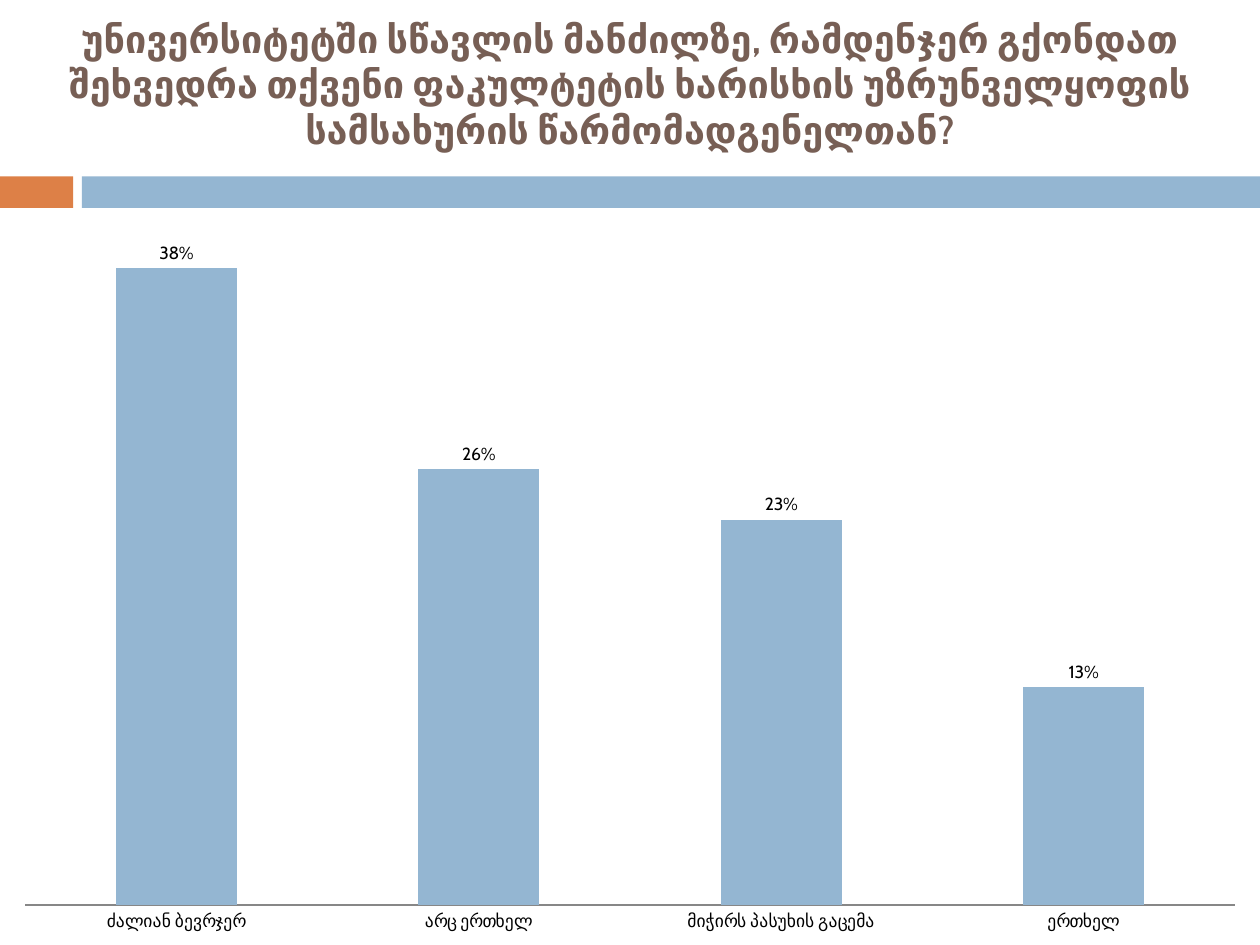
import pptx
import pptx.chart.data
import pptx.dml.color
import pptx.enum.chart
import pptx.enum.shapes
import pptx.enum.text
import pptx.oxml
import pptx.oxml.ns
import pptx.util

TITLE = "უნივერსიტეტში სწავლის მანძილზე, რამდენჯერ გქონდათ შეხვედრა თქვენი ფაკულტეტის ხარისხის უზრუნველყოფის სამსახურის წარმომადგენელთან?"
ANSWERS = [
    ("ძალიან ბევრჯერ", 0.38),
    ("არც ერთხელ", 0.26),
    ("მიჭირს პასუხის გაცემა", 0.23),
    ("ერთხელ", 0.13),
]
FONT = "Cabin"
BLUE, ORANGE, BROWN, BLACK, GRAY = "94B6D2", "DD8047", "775F55", "000000", "878787"
WIDTH, HEIGHT = 10, 7.5
TITLE_HEIGHT, CHART_TOP = 1.33, 1.75
BAND_TOP, BAND_HEIGHT = 1.4, 0.25
BANDS = [(0, 0.58, ORANGE), (0.65, WIDTH, BLUE)]
PLOT = {"x": 0.02, "y": 0.02, "w": 0.96, "h": 0.925}


def color(value):
    return pptx.dml.color.RGBColor.from_string(value)


def box(*lengths):
    return [pptx.util.Inches(v) for v in lengths]


def style(font, size, value, bold=False):
    font.name, font.size, font.bold = FONT, pptx.util.Pt(size), bold
    font.color.rgb = color(value)


def add_title(s):
    sp = s.shapes.title
    sp.left, sp.top, sp.width, sp.height = box(0, 0, WIDTH, TITLE_HEIGHT)
    tf = sp.text_frame
    tf.text = TITLE
    tf.word_wrap = True
    tf.auto_size = pptx.enum.text.MSO_AUTO_SIZE.NONE
    tf.vertical_anchor = pptx.enum.text.MSO_ANCHOR.MIDDLE
    p = tf.paragraphs[0]
    p.alignment = pptx.enum.text.PP_ALIGN.CENTER
    style(p.font, 21.6, BROWN, True)


def add_bands(s):
    for left, right, fill in BANDS:
        sp = s.shapes.add_shape(
            pptx.enum.shapes.MSO_SHAPE.RECTANGLE,
            *box(left, BAND_TOP, right - left, BAND_HEIGHT))
        sp.shadow.inherit = False
        sp.fill.solid()
        sp.fill.fore_color.rgb = color(fill)
        sp.line.fill.background()


def place_plot(chart):
    modes = "".join(f'<c:{k}Mode val="edge"/>' for k in "xy")
    sizes = "".join(f'<c:{k} val="{v}"/>' for k, v in PLOT.items())
    layout = pptx.oxml.parse_xml(
        f'<c:layout {pptx.oxml.ns.nsdecls("c")}><c:manualLayout>'
        f'<c:layoutTarget val="inner"/>{modes}{sizes}</c:manualLayout></c:layout>')
    area = chart.plots[0]._element.getparent()
    for old in area.findall(pptx.oxml.ns.qn("c:layout")):
        area.remove(old)
    area.insert(0, layout)


def add_chart(s):
    data = pptx.chart.data.CategoryChartData(number_format="0%")
    data.categories = [name for name, _ in ANSWERS]
    data.add_series("Series 1", [share for _, share in ANSWERS])
    chart = s.shapes.add_chart(
        pptx.enum.chart.XL_CHART_TYPE.COLUMN_CLUSTERED,
        *box(0, CHART_TOP, WIDTH, HEIGHT - CHART_TOP), data).chart
    chart.has_legend = chart.has_title = False
    style(chart.font, 10, BLACK)

    none = pptx.enum.chart.XL_TICK_MARK.NONE
    axis = chart.category_axis
    axis.major_tick_mark = axis.minor_tick_mark = none
    axis.format.line.color.rgb = color(GRAY)
    axis.format.line.width = pptx.util.Pt(0.75)
    axis = chart.value_axis
    axis.minimum_scale, axis.maximum_scale = 0, 0.4
    axis.has_major_gridlines = False
    axis.visible = False

    plot = chart.plots[0]
    plot.gap_width, plot.overlap = 150, -25
    plot.vary_by_categories = False
    fill = plot.series[0].format.fill
    fill.solid()
    fill.fore_color.rgb = color(BLUE)
    plot.has_data_labels = True
    labels = plot.data_labels
    labels.show_value = True
    labels.number_format, labels.number_format_is_linked = "0%", False
    labels.position = pptx.enum.chart.XL_LABEL_POSITION.OUTSIDE_END
    style(labels.font, 10, BLACK)
    place_plot(chart)


def main():
    prs = pptx.Presentation()
    prs.slide_width, prs.slide_height = box(WIDTH, HEIGHT)
    s = prs.slides.add_slide(prs.slide_layouts[5])
    add_bands(s)
    add_title(s)
    add_chart(s)
    prs.save("out.pptx")


if __name__ == "__main__":
    main()
